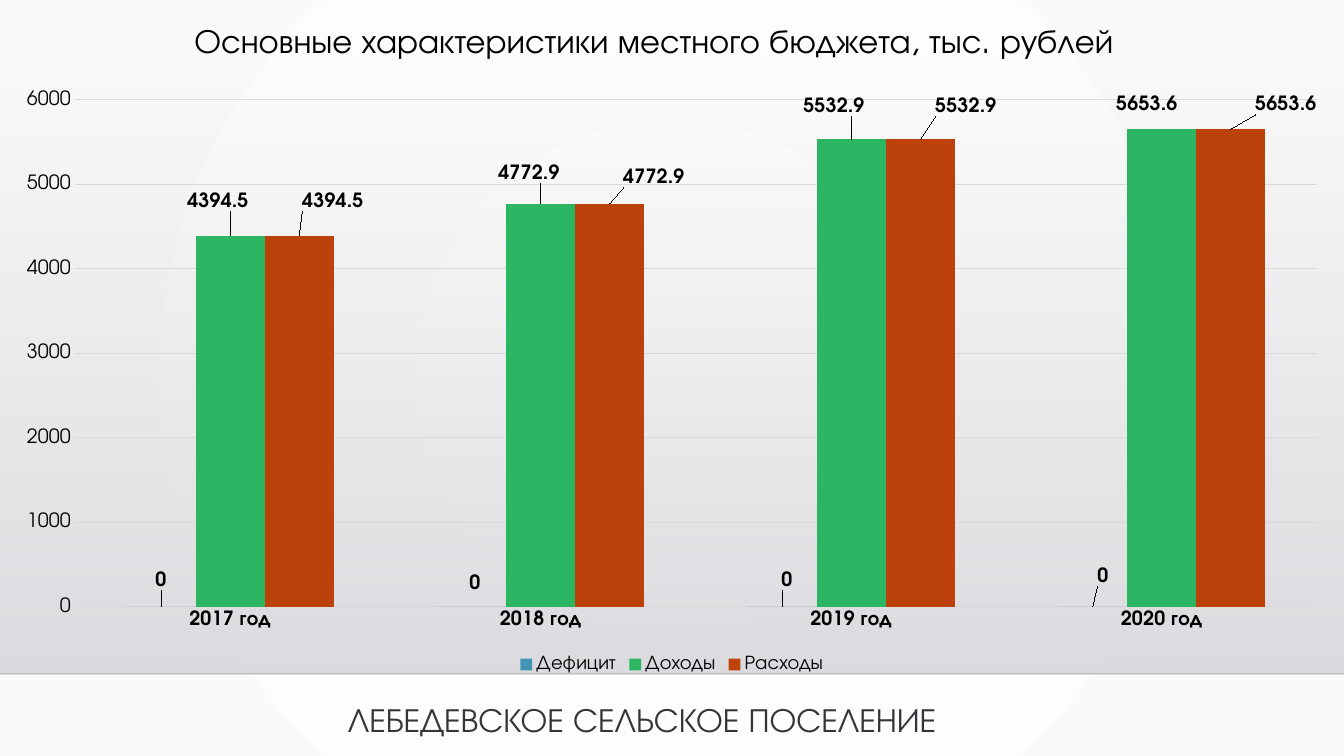
from lxml import etree
from pptx import Presentation
from pptx.chart.data import CategoryChartData
from pptx.dml.color import RGBColor
from pptx.enum.chart import XL_CHART_TYPE, XL_LABEL_POSITION, XL_LEGEND_POSITION, XL_TICK_MARK
from pptx.enum.shapes import MSO_CONNECTOR, MSO_SHAPE
from pptx.enum.text import MSO_ANCHOR, PP_ALIGN
from pptx.oxml import parse_xml
from pptx.oxml.ns import nsdecls, qn
from pptx.util import Pt

COLUMNS = XL_CHART_TYPE.COLUMN_CLUSTERED
OUTSIDE_END = XL_LABEL_POSITION.OUTSIDE_END
LEGEND_BOTTOM = XL_LEGEND_POSITION.BOTTOM
NO_TICKS = XL_TICK_MARK.NONE

TITLE = "Основные характеристики местного бюджета, тыс. рублей"
FOOTER = "ЛЕБЕДЕВСКОЕ СЕЛЬСКОЕ ПОСЕЛЕНИЕ"
YEARS = ["2017 год", "2018 год", "2019 год", "2020 год"]
BUDGET = [4394.5, 4772.9, 5532.9, 5653.6]
# name, colour, values, label centres on the slide in px
SERIES = [
    ("Дефицит", "deficit", [0, 0, 0, 0],
     [(161, 582), (475, 585), (787, 582), (1103, 578)]),
    ("Доходы", "income", BUDGET,
     [(218, 203), (529, 175), (834, 108), (1147, 106)]),
    ("Расходы", "expense", BUDGET,
     [(333, 203), (654, 179), (966, 108), (1286, 106)]),
]
FONT = "TeX Gyre Adventor"
COLORS = {
    "deficit": "4294B6", "income": "2CB663", "expense": "BC410A",
    "text": "000000", "footer": "34343B", "grid": "D9D9D9", "rule": "000001",
    "center": "FFFFFF", "edge": "FAFAFA", "band_top": "DCDCE0", "band_bottom": "DEDEE2",
}

# Lengths in px
SCALE = 914400 / 100.8
SLIDE = (1344, 756)
BAND = (0, 51, 1344, 623)
CHART = (0, 80, 1344, 598)
PLOT = (75, 100, 1242, 507)
TITLE_BOX = (125, 19, 1058, 97)
FOOTER_BOX = (338, 694, 669, 50)
AXIS_MAX = 6000
GAP_WIDTH = 150
LABEL_RISE = 13


def emu(*lengths):
    return [round(length * SCALE) for length in lengths]


def rgb(name):
    return RGBColor.from_string(COLORS[name])


def set_font(font, size, color="text", bold=False):
    font.name, font.size, font.bold = FONT, Pt(size), bold
    font.color.rgb = rgb(color)


def set_gradient(fill, properties, stops, direction):
    """Replace the fill with a gradient of (colour, opacity) stops."""
    fill.gradient()
    gradient = properties.find(qn("a:gradFill"))
    items = "".join(
        f'<a:gs pos="{position}"><a:srgbClr val="{COLORS[color]}">'
        f'<a:alpha val="{opacity * 1000}"/></a:srgbClr></a:gs>'
        for position, (color, opacity) in zip((0, 100000), stops))
    properties.replace(gradient, parse_xml(
        f'<a:gradFill {nsdecls("a")} rotWithShape="1"><a:gsLst>{items}</a:gsLst>'
        f'{direction}</a:gradFill>'))


def manual_layout(**values):
    items = "".join(f'<c:{key} val="{value}"/>' for key, value in values.items())
    return parse_xml(f'<c:layout {nsdecls("c")}><c:manualLayout>{items}'
                     '</c:manualLayout></c:layout>')


def add_background(slide):
    fill = slide.background.fill
    fill.solid()
    properties = slide.element.cSld.find(qn("p:bg")).find(qn("p:bgPr"))
    set_gradient(fill, properties, [("center", 100), ("edge", 100)],
                 '<a:path path="circle"><a:fillToRect l="50000" t="50000" '
                 'r="50000" b="50000"/></a:path>')
    band = slide.shapes.add_shape(MSO_SHAPE.RECTANGLE, *emu(*BAND))
    band.shadow.inherit = False
    band.line.fill.background()
    set_gradient(band.fill, band.element.spPr, [("band_top", 0), ("band_bottom", 100)],
                 '<a:lin ang="5400000" scaled="0"/>')
    bottom = BAND[1] + BAND[3]
    rule = slide.shapes.add_connector(MSO_CONNECTOR.STRAIGHT, *emu(0, bottom, SLIDE[0], bottom))
    rule.line.width = Pt(1)
    rule.line.color.rgb = rgb("rule")
    color = next(rule.element.spPr.iter(qn("a:srgbClr")))
    etree.SubElement(color, qn("a:alpha")).set("val", "20000")
    etree.SubElement(rule.element.spPr, qn("a:effectLst"))


def write_text(shape, box, text, color):
    shape.left, shape.top, shape.width, shape.height = emu(*box)
    frame = shape.text_frame
    frame.word_wrap = True
    frame.vertical_anchor = MSO_ANCHOR.TOP
    frame.text = text
    set_font(frame.paragraphs[0].font, 24, color)
    return frame.paragraphs[0]


def place_labels(series, order, values, centers):
    """Shift each label from its place above the bar to its own centre."""
    category_width = PLOT[2] / len(YEARS)
    bar_width = category_width / (len(SERIES) + GAP_WIDTH / 100)
    for index, (value, (x, y)) in enumerate(zip(values, centers)):
        label = series.points[index].data_label
        set_font(label.font, 14, bold=True)
        label.position = OUTSIDE_END
        bar_x = PLOT[0] + category_width * (index + 0.5) + bar_width * (order - 1)
        bar_top = PLOT[1] + PLOT[3] * (1 - value / AXIS_MAX)
        shift = manual_layout(x=round((x - bar_x) / CHART[2], 4),
                              y=round((y - bar_top + LABEL_RISE) / CHART[3], 4))
        series.data_labels._element.findall(qn("c:dLbl"))[index].insert(1, shift)


def add_budget_chart(slide):
    data = CategoryChartData()
    data.categories = YEARS
    for name, _, values, _ in SERIES:
        data.add_series(name, values)
    chart = slide.shapes.add_chart(COLUMNS, *emu(*CHART), data).chart
    set_font(chart.font, 14)
    chart.has_title = False
    chart.has_legend = True
    chart.legend.position = LEGEND_BOTTOM
    chart.legend.include_in_layout = False
    set_font(chart.legend.font, 14)

    value_axis, category_axis = chart.value_axis, chart.category_axis
    for axis in (value_axis, category_axis):
        axis.major_tick_mark = axis.minor_tick_mark = NO_TICKS
        axis.format.line.fill.background()
        set_font(axis.tick_labels.font, 14, bold=axis is category_axis)
    value_axis.minimum_scale, value_axis.maximum_scale = 0, AXIS_MAX
    value_axis.major_unit = 1000
    grid = value_axis.major_gridlines.format.line
    grid.color.rgb = rgb("grid")
    grid.width = Pt(0.75)

    plot = chart.plots[0]
    plot.gap_width, plot.overlap, plot.vary_by_categories = GAP_WIDTH, 0, False
    for order, (series, (_, color, values, centers)) in enumerate(zip(plot.series, SERIES)):
        series.format.fill.solid()
        series.format.fill.fore_color.rgb = rgb(color)
        series.data_labels.show_value = True
        set_font(series.data_labels.font, 14, bold=True)
        place_labels(series, order, values, centers)

    plot_area = chart._chartSpace.chart.plotArea
    for layout in plot_area.findall(qn("c:layout")):
        plot_area.remove(layout)
    plot_area.insert(0, manual_layout(
        layoutTarget="inner", xMode="edge", yMode="edge",
        x=round((PLOT[0] - CHART[0]) / CHART[2], 4),
        y=round((PLOT[1] - CHART[1]) / CHART[3], 4),
        w=round(PLOT[2] / CHART[2], 4), h=round(PLOT[3] / CHART[3], 4)))


def main():
    presentation = Presentation()
    presentation.slide_width, presentation.slide_height = emu(*SLIDE)
    slide = presentation.slides.add_slide(presentation.slide_layouts[5])
    add_background(slide)
    title = write_text(slide.shapes.title, TITLE_BOX, TITLE, "text")
    title.alignment = PP_ALIGN.CENTER
    title.line_spacing = 0.9
    footer = slide.shapes.add_textbox(*emu(*FOOTER_BOX))
    write_text(footer, FOOTER_BOX, FOOTER, "footer")
    add_budget_chart(slide)
    # The title is created first; keep it above the band.
    tree = slide.shapes.title.element.getparent()
    tree.insert(tree.index(footer.element), slide.shapes.title.element)
    presentation.save("out.pptx")


if __name__ == "__main__":
    main()
